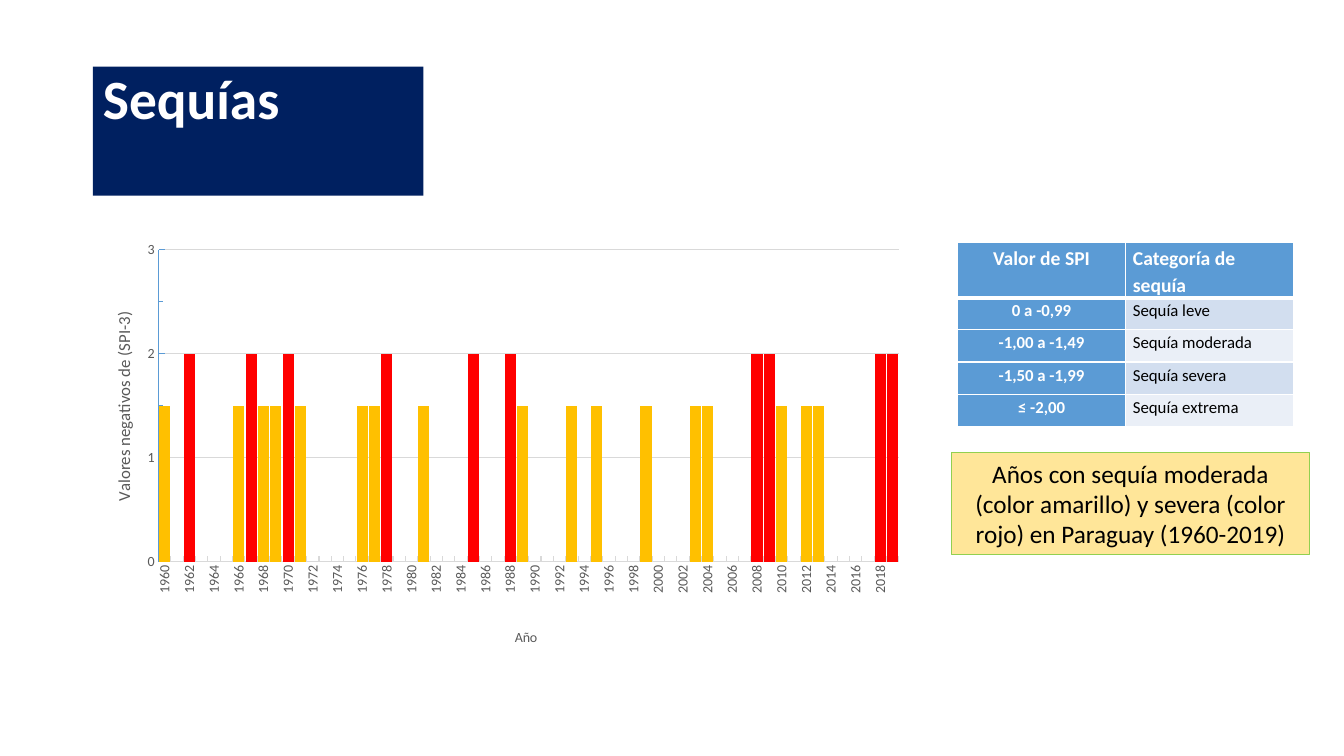
from pptx import Presentation
from pptx.chart.data import CategoryChartData
from pptx.dml.color import RGBColor
from pptx.enum.chart import XL_CHART_TYPE, XL_TICK_MARK
from pptx.enum.shapes import MSO_SHAPE
from pptx.enum.text import MSO_ANCHOR, MSO_AUTO_SIZE, PP_ALIGN
from pptx.oxml import parse_xml
from pptx.oxml.ns import nsdecls
from pptx.util import Cm, Pt

NAVY, WHITE, BLACK, BLUE = "002060", "FFFFFF", "000000", "5B9BD5"
GREY, PALE, RED, AMBER = "595959", "D9D9D9", "FF0000", "FFC000"
BANDS = ["D2DEEF", "EAEFF7"]

YEARS = range(1960, 2020)
SEVERE = {1962, 1967, 1970, 1978, 1985, 1988, 2008, 2009, 2018, 2019}
MILD = {1960, 1966, 1968, 1969, 1971, 1976, 1977, 1981, 1989, 1993,
        1995, 1999, 2003, 2004, 2010, 2012, 2013}

ROWS = [
    ("Valor de SPI", "Categoría de sequía"),
    ("0 a -0,99", "Sequía leve"),
    ("-1,00 a -1,49", "Sequía moderada"),
    ("-1,50 a -1,99", "Sequía severa"),
    ("≤ -2,00", "Sequía extrema"),
]


def tint(code):
    return RGBColor.from_string(code)


def apply(target, values):
    """Set each named attribute of target."""
    for name, value in values.items():
        setattr(target, name, value)


def paint(fill, code):
    fill.solid()
    fill.fore_color.rgb = tint(code)


def stroke(line, code):
    line.color.rgb = tint(code)
    line.width = Pt(0.75)


def place(node, target=None, **spots):
    """Give a chart part a fixed layout, in fractions of the chart."""
    for old in node.xpath("c:layout"):
        node.remove(old)
    kind = f'<c:layoutTarget val="{target}"/>' if target else ""
    modes = "".join(f'<c:{k}Mode val="edge"/>' for k in "xy")
    sizes = "".join(f'<c:{k} val="{v}"/>' for k, v in spots.items())
    node.insert(len(node.xpath("c:tx")), parse_xml(
        f'<c:layout {nsdecls("c")}><c:manualLayout>{kind}{modes}{sizes}'
        "</c:manualLayout></c:layout>"))


class Page:
    def __init__(self, deck, face):
        self.slide = deck.slides.add_slide(deck.slide_layouts[5])
        self.shapes = self.slide.shapes
        self.face = face

    def style(self, font, size, code, bold=False):
        apply(font, {"name": self.face, "size": Pt(size), "bold": bold})
        font.color.rgb = tint(code)

    def label(self, frame, text, size, code, bold=False, **layout):
        frame.text = text
        para = frame.paragraphs[0]
        apply(para, layout)
        self.style(para.runs[0].font, size, code, bold)

    def title(self, text, left, top, width, height):
        box = self.shapes.title
        apply(box, {"left": Cm(left), "top": Cm(top),
                    "width": Cm(width), "height": Cm(height)})
        paint(box.fill, NAVY)
        apply(box.text_frame, {"auto_size": MSO_AUTO_SIZE.NONE,
                               "vertical_anchor": MSO_ANCHOR.TOP})
        self.label(box.text_frame, text, 39.6, WHITE, True,
                   alignment=PP_ALIGN.LEFT, line_spacing=0.9)

    def note(self, text, left, top, width, height):
        box = self.shapes.add_shape(
            MSO_SHAPE.RECTANGLE, Cm(left), Cm(top), Cm(width), Cm(height))
        box.shadow.inherit = False
        paint(box.fill, "FFE699")
        stroke(box.line, "92D050")
        box.text_frame.word_wrap = True
        self.label(box.text_frame, text, 18, BLACK, alignment=PP_ALIGN.CENTER)

    def edge(self, cell, row):
        """Draw white borders, thick between the header and the body."""
        wide = {"T": 3 if row == 1 else 1, "B": 3 if row == 0 else 1}
        for spot, side in enumerate("LRTB"):
            cell._tc.get_or_add_tcPr().insert(spot, parse_xml(
                f'<a:ln{side} {nsdecls("a")} w="{Pt(wide.get(side, 1))}">'
                f'<a:solidFill><a:srgbClr val="{WHITE}"/></a:solidFill>'
                f"</a:ln{side}>"))

    def table(self, rows, left, top, width, heights):
        count = len(rows[0])
        grid = self.shapes.add_table(
            len(rows), count, Cm(left), Cm(top),
            Cm(width * count), Cm(sum(heights))).table
        for col in grid.columns:
            col.width = Cm(width)
        for r, texts in enumerate(rows):
            grid.rows[r].height = Cm(heights[r])
            for c, text in enumerate(texts):
                cell = grid.cell(r, c)
                head = r == 0 or c == 0
                apply(cell, {"margin_left": Cm(0.18), "margin_right": Cm(0.18),
                             "margin_top": 0, "margin_bottom": 0,
                             "vertical_anchor": MSO_ANCHOR.TOP})
                self.label(cell.text_frame, text, 12 if r else 14,
                           WHITE if head else BLACK, head, line_spacing=1.15,
                           alignment=PP_ALIGN.LEFT if c else PP_ALIGN.CENTER)
                self.edge(cell, r)
                paint(cell.fill, BLUE if head else BANDS[(r - 1) % 2])

    def axis(self, axis, text, size, code, x, y):
        axis.major_tick_mark = XL_TICK_MARK.INSIDE
        self.style(axis.tick_labels.font, 10, GREY)
        stroke(axis.format.line, code)
        self.label(axis.axis_title.text_frame, text, size, GREY)
        place(axis.axis_title.element, x=x, y=y)

    def chart(self, years, values, left, top, width, height):
        data = CategoryChartData()
        data.categories = [str(year) for year in years]
        data.add_series("SPI-3", values)
        chart = self.shapes.add_chart(
            XL_CHART_TYPE.COLUMN_CLUSTERED, Cm(left), Cm(top),
            Cm(width), Cm(height), data).chart
        apply(chart, {"has_title": False, "has_legend": False})
        self.style(chart.font, 10, BLACK)

        plot = chart.plots[0]
        apply(plot, {"gap_width": 10, "overlap": -27,
                     "vary_by_categories": False})
        bars = plot.series[0]
        bars.invert_if_negative = False
        paint(bars.format.fill, RED)
        for i, value in enumerate(values):
            if value == 1.5:
                paint(bars.points[i].format.fill, AMBER)

        self.axis(chart.category_axis, "Año", 10, PALE, 0.51, 0.89)
        self.axis(chart.value_axis, "Valores negativos de (SPI-3)",
                  12, BLUE, 0.02, 0.19)
        apply(chart.value_axis, {
            "minimum_scale": 0, "maximum_scale": 3, "major_unit": 1,
            "minor_unit": 0.5, "minor_tick_mark": XL_TICK_MARK.INSIDE,
            "has_major_gridlines": True})
        stroke(chart.value_axis.major_gridlines.format.line, PALE)

        root = chart.element
        place(root.xpath("//c:plotArea")[0], "inner",
              x=0.08, y=0.06, w=0.9, h=0.69)
        root.xpath("//c:catAx/c:txPr/a:bodyPr")[0].set("rot", "-5400000")
        root.xpath("//c:catAx/c:noMultiLvlLbl")[0].addprevious(
            parse_xml(f'<c:tickLblSkip {nsdecls("c")} val="2"/>'))


def main():
    deck = Presentation()
    apply(deck, {"slide_width": Cm(33.87), "slide_height": Cm(19.05)})
    page = Page(deck, "Calibri")
    page.title("Sequías", 2.34, 1.68, 8.33, 3.25)
    values = [2 if year in SEVERE else 1.5 if year in MILD else None
              for year in YEARS]
    page.chart(YEARS, values, 2.34, 5.61, 20.73, 11.4)
    page.table(ROWS, 24.13, 6.12, 4.24, [1.37] + [0.81] * 4)
    page.note("Años con sequía moderada (color amarillo) y severa "
              "(color rojo) en Paraguay (1960-2019)",
              23.98, 11.4, 9.02, 2.57)
    deck.save("out.pptx")


if __name__ == "__main__":
    main()
